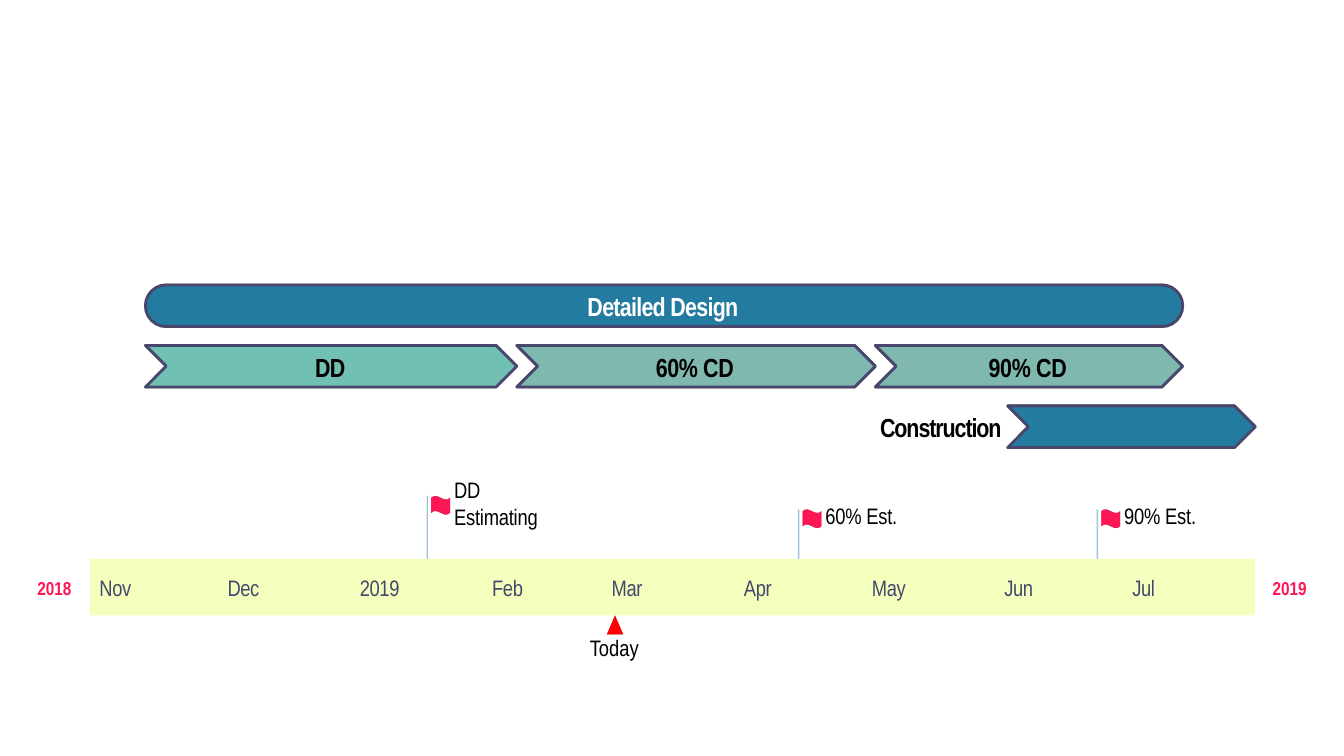
import pptx
import pptx.util
import pptx.dml.color
import pptx.enum.shapes
import pptx.enum.text
import pptx.oxml
import pptx.oxml.ns
import lxml.etree

RGBColor = pptx.dml.color.RGBColor
Inches = pptx.util.Inches
Pt = pptx.util.Pt
SHAPE = pptx.enum.shapes.MSO_SHAPE
ALIGN = pptx.enum.text.PP_ALIGN
qn = pptx.oxml.ns.qn

BLUE = RGBColor(0x24, 0x7B, 0xA0)
TEAL = RGBColor(0x70, 0xC1, 0xB3)
INDIGO = RGBColor(0x48, 0x46, 0x6D)
PINK = RGBColor(0xFF, 0x16, 0x54)
LEMON = RGBColor(0xF3, 0xFF, 0xBD)
RED = RGBColor(0xFF, 0x00, 0x00)
POLE = RGBColor(0x4F, 0x81, 0xBD)
BLACK = RGBColor(0x00, 0x00, 0x00)
WHITE = RGBColor(0xFF, 0xFF, 0xFF)

# Time grid: one column per day, from 1 November to 31 July
START, SPAN, DAYS = 0.67, 8.67, 273
COLUMN = SPAN / DAYS
# Row grid for the bars
FIRST_ROW, ROW, BAR_HEIGHT = 2.12, 0.45, 0.31
BAND_TOP, BAND_HEIGHT = 4.16, 0.42

deck = pptx.Presentation()
deck.slide_width = Inches(10)
deck.slide_height = Inches(10 * 9 / 16)
page = deck.slides.add_slide(deck.slide_layouts[6])


def add_block(kind, left, top, width, height, fill, outlined=False, opacity=100, shadow=True):
    """Draw a filled shape, optionally with an outline and a shadow directly beneath it."""
    block = page.shapes.add_shape(kind, Inches(left), Inches(top), Inches(width), Inches(height))
    block.fill.solid()
    block.fill.fore_color.rgb = fill
    block.shadow.inherit = False
    properties = block._element.spPr
    if opacity < 100:
        colour = properties.find(qn("a:solidFill"))[0]
        lxml.etree.SubElement(colour, qn("a:alpha"), val=str(opacity * 1000))
    if outlined:
        block.line.color.rgb = INDIGO
        block.line.width = Pt(1.5)
    else:
        block.line.fill.background()
    if shadow:
        effects = properties.find(qn("a:effectLst"))
        cast = lxml.etree.SubElement(effects, qn("a:outerShdw"), blurRad="0", dist="0", dir="0")
        black = lxml.etree.SubElement(cast, qn("a:srgbClr"), val="000000")
        lxml.etree.SubElement(black, qn("a:alpha"), val="50000")
    return block


def add_label(text, left, top, width, height, size=12, colour=BLACK, bold=False,
              spacing=0, align=ALIGN.LEFT, wrap=False):
    """Write one run of text; spacing is in points between letters."""
    box = page.shapes.add_textbox(Inches(left), Inches(top), Inches(width), Inches(height))
    frame = box.text_frame
    frame.word_wrap = wrap
    frame.vertical_anchor = pptx.enum.text.MSO_ANCHOR.MIDDLE
    frame.margin_left = frame.margin_right = frame.margin_top = frame.margin_bottom = 0
    para = frame.paragraphs[0]
    para.alignment = align
    span = para.add_run()
    span.text = text
    span.font.name = "Arial Narrow"
    span.font.size = Pt(size)
    span.font.bold = bold
    span.font.color.rgb = colour
    if spacing:
        span._r.get_or_add_rPr().set("spc", str(round(spacing * 100)))


# Milestones: text, day, top of the flag, then label width, height and wrapping
milestones = [
    ("DD Estimating", 79, 3.69, 0.64, 0.38, True),
    ("60% Est.", 166, 3.79, 0.56, 0.2, False),
    ("90% Est.", 236, 3.79, 0.56, 0.2, False),
]

# Flag poles stand on the month band
for text, day, top, width, height, wrap in milestones:
    x = START + day * COLUMN
    pole = page.shapes.add_connector(pptx.enum.shapes.MSO_CONNECTOR.STRAIGHT,
                                     Inches(x), Inches(top), Inches(x), Inches(BAND_TOP))
    pole.line.color.rgb = POLE
    pole.line.width = Pt(0.75)
    properties = pole._element.spPr
    colour = properties.find(qn("a:ln")).find(qn("a:solidFill"))[0]
    lxml.etree.SubElement(colour, qn("a:alpha"), val="50000")
    lxml.etree.SubElement(properties, qn("a:effectLst"))

# Month band with the years at both ends
add_block(SHAPE.RECTANGLE, START, BAND_TOP, SPAN, BAND_HEIGHT, LEMON, shadow=False)
for year, left in [("2018", 0.26), ("2019", 9.45)]:
    add_label(year, left, 4.29, 0.29, 0.17, 10, PINK, True, align=ALIGN.CENTER)

months = [("Nov", 30, 0.25), ("Dec", 31, 0.25), ("2019", 31, 0.31), ("Feb", 28, 0.24),
          ("Mar", 31, 0.23), ("Apr", 30, 0.21), ("May", 31, 0.26), ("Jun", 30, 0.22),
          ("Jul", 31, 0.17)]
day = 0
for month, length, width in months:
    add_label(month, START + 0.07 + day * COLUMN, 4.28, width, 0.19, colour=INDIGO, spacing=-0.2)
    day += length

# Marker for today
today = START + 123 * COLUMN
add_block(SHAPE.ISOSCELES_TRIANGLE, today - 0.06, BAND_TOP + BAND_HEIGHT, 0.12, 0.14, RED)
add_label("Today", today - 0.19, 4.72, 0.37, 0.2, align=ALIGN.CENTER)

# Flags and their labels
for text, day, top, width, height, wrap in milestones:
    x = START + day * COLUMN
    flag = add_block(SHAPE.WAVE, x + 0.03, top, 0.14, 0.14, PINK)
    flag.adjustments[0] = 0.1
    flag.adjustments[1] = 0
    label_top = 3.55 if wrap else 3.74
    add_label(text, x + 0.2, label_top, width, height, spacing=-0.1, wrap=wrap)

# Bars: text, row, first day, last day, fill, opacity, text colour, text width, spacing
bars = [
    ("Detailed Design", 0, 13, 256, BLUE, 100, WHITE, 1.14, -0.4),
    ("DD", 1, 13, 100, TEAL, 100, BLACK, 0.24, -0.3),
    ("60% CD", 1, 100, 184, TEAL, 70, BLACK, 0.6, -0.2),
    ("90% CD", 1, 184, 256, TEAL, 70, BLACK, 0.6, -0.2),
    ("Construction", 2, 215, 273, BLUE, 100, BLACK, 0.95, -0.6),
]
for text, row, first, last, fill, opacity, colour, width, spacing in bars:
    left = START + first * COLUMN
    length = (last - first) * COLUMN
    top = FIRST_ROW + row * ROW
    kind = SHAPE.CHEVRON if row else SHAPE.ROUNDED_RECTANGLE
    bar = add_block(kind, left, top, length, BAR_HEIGHT, fill, True, opacity)
    if row == 0:
        bar.adjustments[0] = 0.5
    # The last row carries its text in front of the bar
    text_left = left - width if row == 2 else left + (length - width) / 2
    add_label(text, text_left, top + 0.04, width, 0.24, 14, colour, True, spacing)

deck.save("out.pptx")
